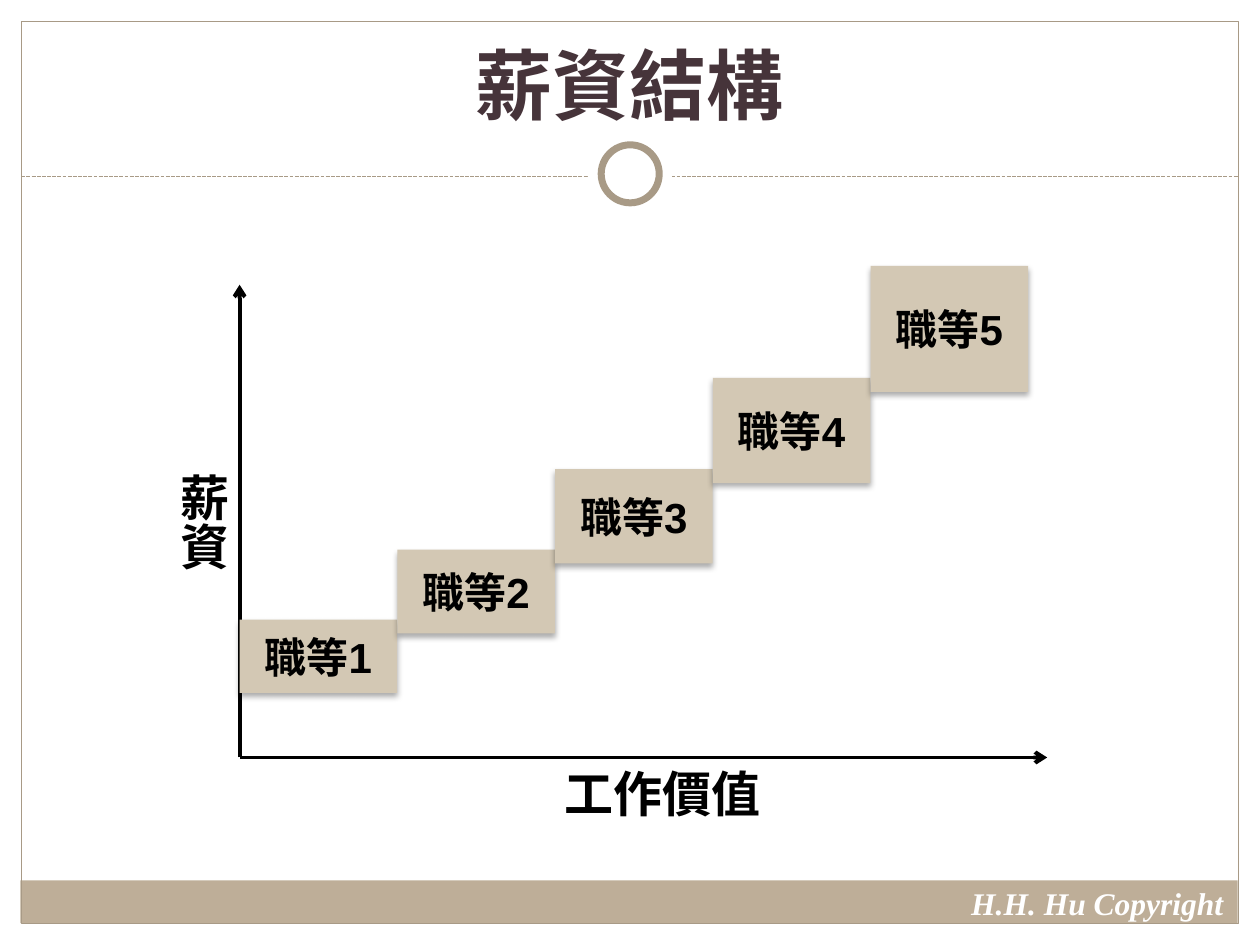
from lxml import etree
from pptx import Presentation
from pptx import util as u
from pptx.dml.color import RGBColor
from pptx.enum import dml, shapes, text
from pptx.oxml import ns

COLORS = {
    "paper": "FFFFFF",
    "band": "BEAE98",
    "rule": "A89A86",
    "title": "46343A",
    "ink": "000000",
    "grade": "D3C8B4",
}
GRADE_HEIGHTS = (1.48, 1.69, 1.9, 2.12, 2.54)
GRADE_WIDTH = 3.18
GRADE_OVERLAP = 0.28
GRADE_BOTTOM = 13.97
ORIGIN = (4.83, 15.27)


def rgb(name):
    return RGBColor.from_string(COLORS[name])


def child(parent, tag, **attrs):
    return etree.SubElement(parent, ns.qn(tag), attrs)


def write(sp, content, size, font="Arial", color="ink", italic=False,
          align=text.PP_ALIGN.LEFT, anchor=text.MSO_ANCHOR.TOP,
          wrap=False, grow=False, vert=None):
    tf = sp.text_frame
    tf.word_wrap = wrap
    tf.vertical_anchor = anchor
    if grow:
        tf.auto_size = text.MSO_AUTO_SIZE.SHAPE_TO_FIT_TEXT
    if vert:
        tf._txBody.bodyPr.set("vert", vert)
    p = tf.paragraphs[0]
    p.alignment = align
    r = p.add_run()
    r.text = content
    r.font.size = u.Pt(size)
    r.font.name = font
    r.font.bold = True
    r.font.italic = italic
    r.font.color.rgb = rgb(color)


def add_label(s, box, content, size, **fmt):
    sp = s.shapes.add_textbox(*map(u.Cm, box))
    write(sp, content, size, **fmt)


def add_box(s, kind, box, fill=None, line=None, width=0.75):
    sp = s.shapes.add_shape(kind, *map(u.Cm, box))
    sp.shadow.inherit = False
    if fill:
        sp.fill.solid()
        sp.fill.fore_color.rgb = rgb(fill)
    else:
        sp.fill.background()
    if line:
        sp.line.color.rgb = rgb(line)
        sp.line.width = u.Pt(width)
    else:
        sp.line.fill.background()
    return sp


def add_line(s, start, end, color, width, dash=None, arrow=False):
    c = s.shapes.add_connector(shapes.MSO_CONNECTOR.STRAIGHT,
                               *map(u.Cm, (*start, *end)))
    c.line.color.rgb = rgb(color)
    c.line.width = u.Pt(width)
    if dash:
        c.line.dash_style = dash
    if arrow:
        child(c.line._get_or_add_ln(), "a:tailEnd", type="arrow")
    child(c._element.spPr, "a:effectLst")


def drop_shadow(sp):
    effects = sp._element.spPr.find(ns.qn("a:effectLst"))
    shadow = child(effects, "a:outerShdw", blurRad=str(u.Pt(3.5)),
                   dist=str(u.Pt(2.2)), dir="5400000", rotWithShape="0")
    color = child(shadow, "a:srgbClr", val=COLORS["ink"])
    child(color, "a:alpha", val="32000")


def add_frame(s):
    rect, oval = shapes.MSO_SHAPE.RECTANGLE, shapes.MSO_SHAPE.OVAL
    add_box(s, rect, (0.41, 17.75, 24.54, 0.86), fill="band")
    add_box(s, rect, (0.43, 0.43, 24.54, 18.19), line="rule")
    add_line(s, (0.43, 3.56), (24.97, 3.56), "rule", 0.75,
             dash=dml.MSO_LINE.SQUARE_DOT)
    add_box(s, oval, (11.85, 2.66, 1.7, 1.7), fill="paper")
    add_box(s, oval, (12.12, 2.92, 1.17, 1.17), fill="paper", line="rule", width=4)
    add_label(s, (19.33, 17.7, 5.77, 1.02), "H.H. Hu Copyright", 18,
              font="Times New Roman", color="paper", italic=True, grow=True)


def add_axes(s):
    for end in ((21.11, ORIGIN[1]), (ORIGIN[0], 5.74)):
        add_line(s, ORIGIN, end, "ink", 2.25, arrow=True)
    add_label(s, (11.1, 15.27, 4.5, 1.45), "工作價值", 28,
              align=text.PP_ALIGN.CENTER, grow=True)
    add_label(s, (3.12, 9.3, 1.7, 2.21), "薪資", 28, vert="eaVert", grow=True)


def add_grades(s):
    bottom = GRADE_BOTTOM
    for i, height in enumerate(GRADE_HEIGHTS):
        top = bottom - height
        sp = add_box(s, shapes.MSO_SHAPE.RECTANGLE,
                     (ORIGIN[0] + i * GRADE_WIDTH, top, GRADE_WIDTH, height),
                     fill="grade")
        drop_shadow(sp)
        write(sp, f"職等{i + 1}", 24, align=text.PP_ALIGN.CENTER,
              anchor=text.MSO_ANCHOR.MIDDLE)
        bottom = top + GRADE_OVERLAP


def main():
    prs = Presentation()
    prs.slide_width, prs.slide_height = u.Cm(25.4), u.Cm(19.05)
    s = prs.slides.add_slide(prs.slide_layouts[6])
    add_frame(s)
    add_label(s, (0.85, 0.64, 23.7, 2.11), "薪資結構", 44,
              font="Times New Roman", color="title", wrap=True,
              align=text.PP_ALIGN.CENTER, anchor=text.MSO_ANCHOR.BOTTOM)
    add_axes(s)
    add_grades(s)
    prs.save("out.pptx")


if __name__ == "__main__":
    main()
